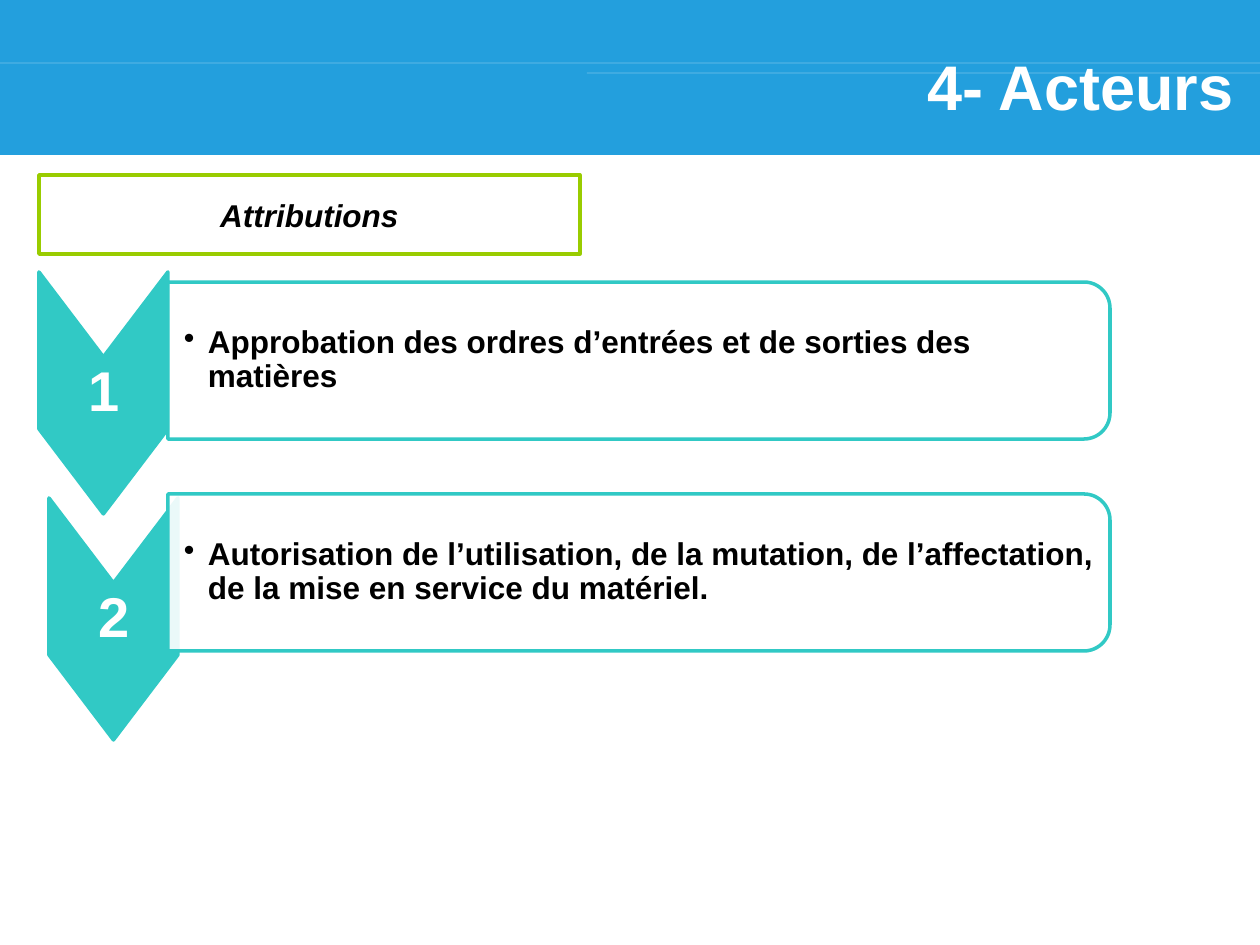
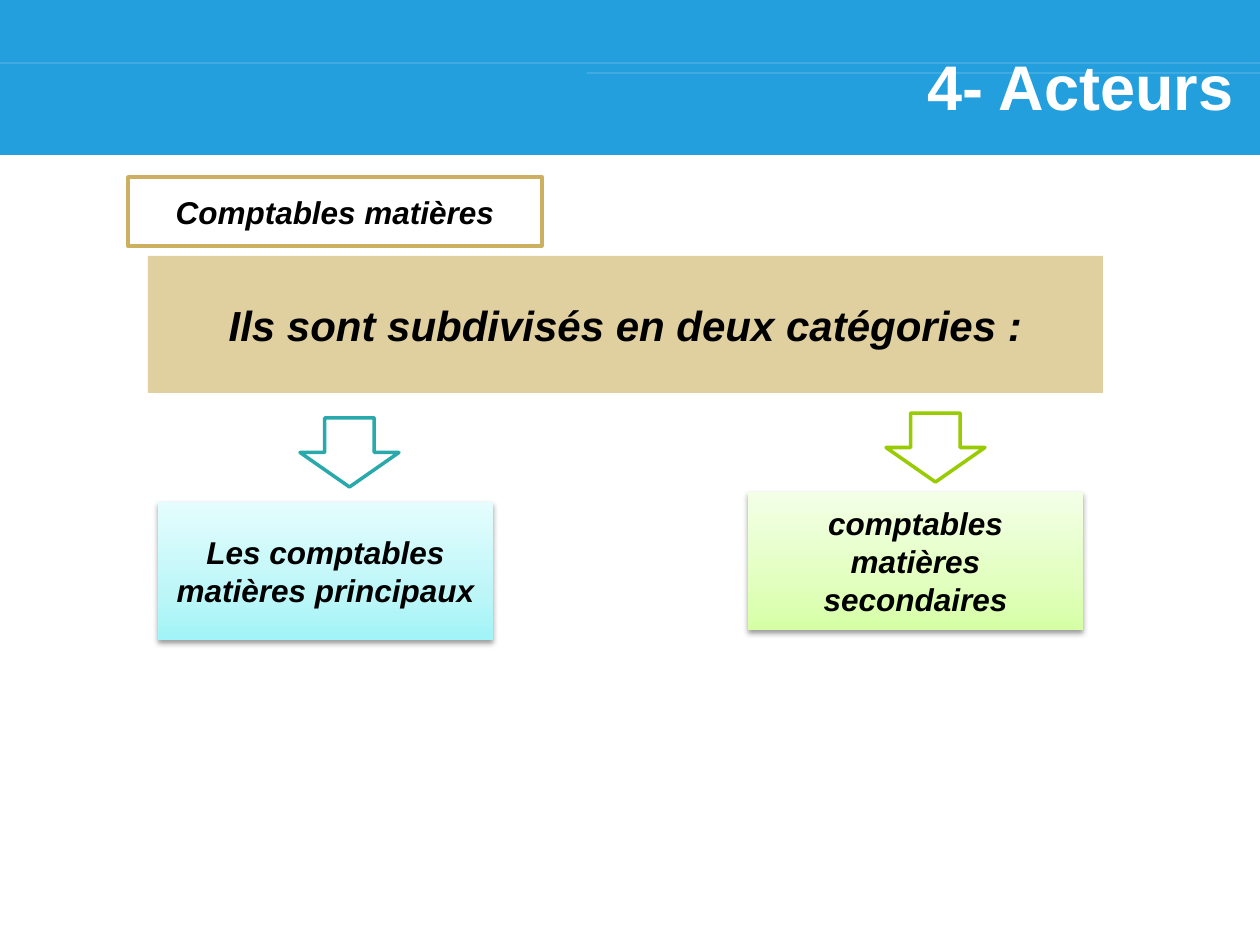
import copy
import math
from lxml import etree
from pptx import Presentation
from pptx import util as u
from pptx.dml.color import RGBColor
from pptx.enum import shapes, text
from pptx.oxml.ns import qn

SCALE = 914400 / 126  # EMU in one px
FONT = "Arial"
WHITE = RGBColor(0xFF, 0xFF, 0xFF)
BLACK = RGBColor(0x00, 0x00, 0x00)
BLUE = RGBColor(0x23, 0x9F, 0xDD)
TEAL = RGBColor(0x31, 0xC9, 0xC5)
SEA = RGBColor(0x2A, 0xA9, 0xAC)
LIME = RGBColor(0x99, 0xCC, 0x00)
GOLD = RGBColor(0xCC, 0xB0, 0x60)
SAND = RGBColor(0xE0, 0xD0, 0xA0)
AQUA = [RGBColor(0xA1, 0xF4, 0xF7), RGBColor(0xBE, 0xF6, 0xF8), RGBColor(0xE5, 0xFD, 0xFE)]
MINT = [RGBColor(0xD6, 0xFF, 0xA5), RGBColor(0xE2, 0xFF, 0xBF), RGBColor(0xF3, 0xFF, 0xE7)]
RECT = shapes.MSO_SHAPE.RECTANGLE


def px(*nums):
    return [u.Emu(round(n * SCALE)) for n in nums]


def dress(shape, fill=None, line=None, words="", size=18, ink=BLACK, slant=True):
    """Set fill, outline and centred bold text; return the paragraph."""
    shape.shadow.inherit = False
    if fill is not None:
        shape.fill.solid()
        shape.fill.fore_color.rgb = fill
    if line is None:
        shape.line.fill.background()
    else:
        shape.line.color.rgb = line
        shape.line.width = u.Pt(2)
    frame = shape.text_frame
    frame.word_wrap = True
    frame.vertical_anchor = text.MSO_ANCHOR.MIDDLE
    par = frame.paragraphs[0]
    par.text = words
    par.alignment = text.PP_ALIGN.CENTER
    for run in par.runs:
        font = run.font
        font.name, font.size, font.bold, font.italic = FONT, u.Pt(size), True, slant
        font.color.rgb = ink
    return par


prs = Presentation()
prs.slide_width, prs.slide_height = px(1260, 945)
base = prs.slide_layouts[5]
first, second = [prs.slides.add_slide(base) for _ in range(2)]
faint = []  # colour elements and their opacity

# Shared band and hairlines, moved to the layout
band = first.shapes.add_shape(RECT, *px(0, 0, 1260, 155))
dress(band, BLUE)
parts = [band]
for left, top in [(0, 63), (587, 73)]:
    rule = first.shapes.add_connector(shapes.MSO_CONNECTOR.STRAIGHT, *px(left, top, 1260, top))
    rule.line.color.rgb = WHITE
    rule.line.width = u.Pt(0.75)
    etree.SubElement(rule._element.spPr, qn("a:effectLst"))
    faint.append((rule._element.spPr.find(".//" + qn("a:srgbClr")), 20))
    parts.append(rule)
for spot, part in enumerate(parts, 2):
    base.shapes._spTree.insert(spot, part._element)

# Titles
for slide in (first, second):
    title = slide.shapes.title
    title.left, title.top, title.width, title.height = px(828, 30, 418, 110)
    frame = title.text_frame
    frame.text = "4- Acteurs"
    frame.vertical_anchor = text.MSO_ANCHOR.MIDDLE
    par = frame.paragraphs[0]
    par.alignment = text.PP_ALIGN.RIGHT
    font = par.runs[0].font
    font.name, font.size, font.bold = FONT, u.Pt(36), True
    font.color.rgb = WHITE

# Slide 1: numbered chevrons with cards
duties = [
    ("1", 39, 272, 282, "Approbation des ordres d’entrées et de sorties des matières"),
    ("2", 49, 498, 494, "Autorisation de l’utilisation, de la mutation, de l’affectation, "
                        "de la mise en service du matériel."),
]
wide, tall, notch = 129, 242, 85
edge, end, deep, bend = 168, 1110, 157, 26
for mark, left, top, head, duty in duties:
    right, mid, low = left + wide, left + wide / 2, top + tall
    pen = first.shapes.build_freeform(*px(right, top), scale=1.0)
    pen.add_line_segments([px(*p) for p in [
        (right, low - notch), (mid, low), (left, low - notch), (left, top), (mid, top + notch)]])
    arrow = pen.convert_to_shape()
    par = dress(arrow, TEAL, TEAL, mark, 32, WHITE, False)
    par.line_spacing = 0.9
    frame = arrow.text_frame
    frame.margin_left, frame.margin_top, frame.margin_right, frame.margin_bottom = px(4, 88, 3, 88)

    # Card rounded at its two right corners
    foot = head + deep
    turns = [math.radians(a) for a in range(0, 91, 6)]
    upper = [(end - bend + bend * math.sin(t), head + bend - bend * math.cos(t)) for t in turns]
    lower = [(x, head + foot - y) for x, y in reversed(upper)]
    pen = first.shapes.build_freeform(*px(edge, head), scale=1.0)
    pen.add_line_segments([px(*p) for p in upper + lower + [(edge, foot)]])
    card = pen.convert_to_shape()
    par = dress(card, WHITE, TEAL, duty, slant=False)
    faint.append((card._element.spPr.find(qn("a:solidFill"))[0], 90))
    par.alignment = text.PP_ALIGN.LEFT
    props = par._p.get_or_add_pPr()
    shift = px(24)[0]
    props.set("marL", str(shift))
    props.set("indent", str(-shift))
    etree.SubElement(props, qn("a:buChar"), char="•")
    par.line_spacing = 0.9
    frame = card.text_frame
    frame.margin_left, frame.margin_top, frame.margin_right, frame.margin_bottom = px(16, 9, 9, 9)

label = first.shapes.add_shape(RECT, *px(39, 175, 541, 79))
dress(label, WHITE, LIME, "Attributions")

# Slide 2: heading and its two categories
intro = second.shapes.add_shape(RECT, *px(148, 256, 955, 137))
dress(intro, SAND, None, "Ils sont subdivisés en deux catégories :", 24)

kinds = [
    ("Les comptables matières principaux", (158, 502), AQUA, (300, 418), SEA),
    ("comptables matières secondaires", (748, 492), MINT, (886, 413), LIME),
]
for words, spot, tints, tip, hue in kinds:
    box = second.shapes.add_shape(RECT, *px(*spot, 335, 138))
    dress(box, words=words)
    box.fill.gradient()
    box.fill.gradient_angle = 90
    stop = box._element.spPr.find(".//" + qn("a:gs"))
    stop.addnext(copy.deepcopy(stop))
    for stop, tint, place in zip(box.fill.gradient_stops, tints, (0, 0.35, 1)):
        stop.color.rgb = tint
        stop.position = place
    glow = etree.SubElement(box._element.spPr.find(qn("a:effectLst")), qn("a:outerShdw"),
                            blurRad="40000", dist="20000", dir="5400000", rotWithShape="0")
    shade = etree.SubElement(glow, qn("a:srgbClr"), val=str(BLACK))
    faint.append((shade, 38))

    arrow = second.shapes.add_shape(shapes.MSO_SHAPE.DOWN_ARROW, *px(*tip, 99, 69))
    dress(arrow, WHITE, hue)

label = second.shapes.add_shape(RECT, *px(128, 177, 414, 69))
dress(label, WHITE, GOLD, "Comptables matières")

# Transparency
for tone, part in faint:
    etree.SubElement(tone, qn("a:alpha"), val=str(part * 1000))

prs.save("out.pptx")
